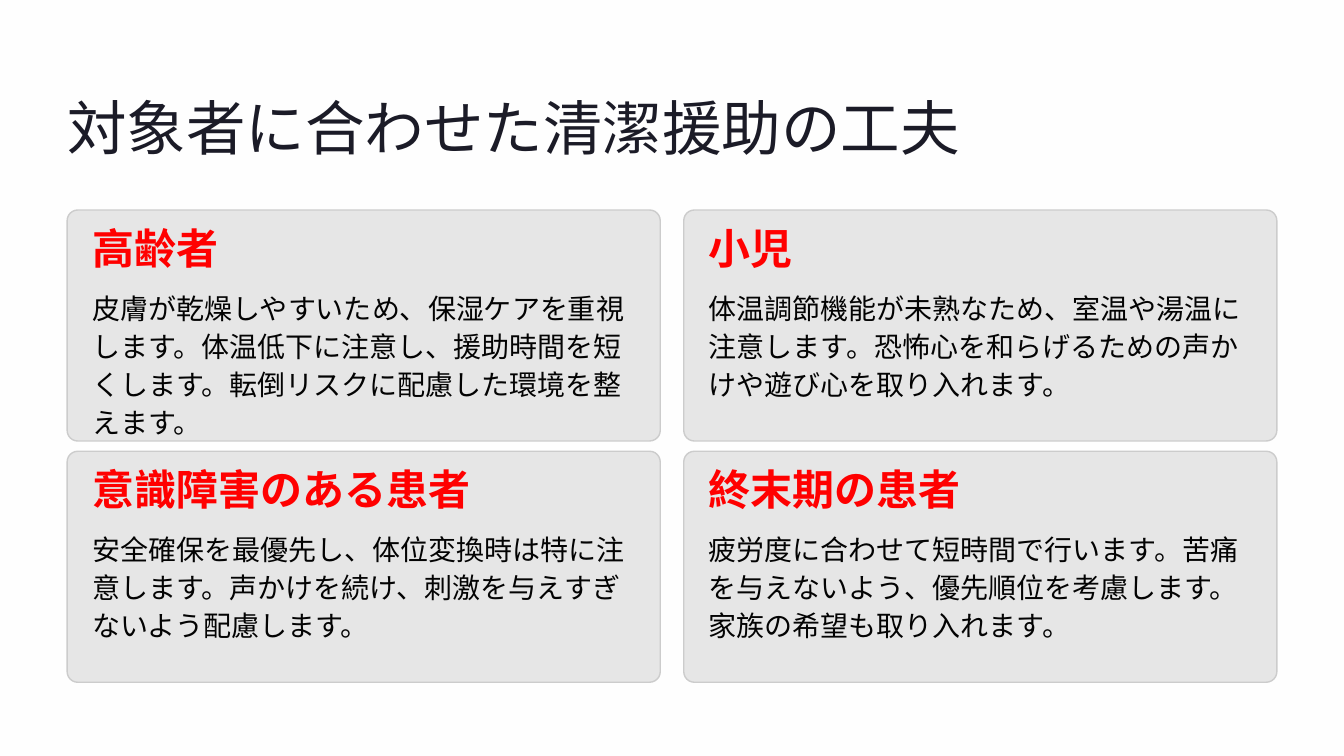
from pptx import Presentation
from pptx.dml.color import RGBColor
from pptx.enum.shapes import MSO_SHAPE
from pptx.enum.text import MSO_ANCHOR, MSO_AUTO_SIZE, PP_ALIGN
from pptx.util import Cm, Pt

CARDS = [
    ("高齢者", "皮膚が乾燥しやすいため、保湿ケアを重視します。体温低下に注意し、"
     "援助時間を短くします。転倒リスクに配慮した環境を整えます。"),
    ("小児", "体温調節機能が未熟なため、室温や湯温に注意します。"
     "恐怖心を和らげるための声かけや遊び心を取り入れます。"),
    ("意識障害のある患者", "安全確保を最優先し、体位変換時は特に注意します。"
     "声かけを続け、刺激を与えすぎないよう配慮します。"),
    ("終末期の患者", "疲労度に合わせて短時間で行います。苦痛を与えないよう、"
     "優先順位を考慮します。家族の希望も取り入れます。"),
]


def paint(color, code):
    color.rgb = RGBColor.from_string(code)


def write(shape, text, size, color, font="Inter", bold=False, lead=32, wrap=False):
    frame = shape.text_frame
    frame.margin_left = frame.margin_right = 0
    frame.margin_top = frame.margin_bottom = 0
    frame.auto_size = MSO_AUTO_SIZE.NONE
    frame.vertical_anchor = MSO_ANCHOR.TOP
    frame.word_wrap = wrap
    para = frame.paragraphs[0]
    para.alignment = PP_ALIGN.LEFT
    para.line_spacing = Pt(lead)
    run = para.add_run()
    run.text = text
    run.font.name = font
    run.font.size = Pt(size)
    run.font.bold = bold
    paint(run.font.color, color)


def add_title(slide, text, left, top, width, height):
    title = slide.shapes.title
    title.left, title.top = Cm(left), Cm(top)
    title.width, title.height = Cm(width), Cm(height)
    write(title, text, 51, "1B1B27", lead=64)


def add_card(slide, head, body, left, top, width, height, pad=0.76):
    # Panel
    panel = slide.shapes.add_shape(MSO_SHAPE.ROUNDED_RECTANGLE,
                                   Cm(left), Cm(top), Cm(width), Cm(height))
    panel.adjustments[0] = 0.046
    panel.shadow.inherit = False
    panel.fill.solid()
    paint(panel.fill.fore_color, "E6E6E6")
    paint(panel.line.color, "CCCCCC")
    panel.line.width = Pt(1.2)

    # Heading and body
    label = slide.shapes.add_textbox(Cm(left + pad), Cm(top + pad), Cm(9.04), Cm(1.14))
    write(label, head, 36, "FF0000", bold=True)
    note = slide.shapes.add_textbox(Cm(left + pad), Cm(top + 2.34),
                                    Cm(width - 2 * pad), Cm(3.48))
    write(note, body, 24, "030303", font="Cabin", lead=32.5, wrap=True)


def add_grid(slide, left, top, width, height, gap_x=0.71, gap_y=0.31):
    wide = (width - gap_x) / 2
    tall = (height - gap_y) / 2
    for i, (head, body) in enumerate(CARDS):
        row, col = divmod(i, 2)
        add_card(slide, head, body, left + col * (wide + gap_x),
                 top + row * (tall + gap_y), wide, tall)


def main():
    deck = Presentation()
    deck.slide_width, deck.slide_height = Cm(40.64), Cm(22.86)
    slide = deck.slides.add_slide(deck.slide_layouts[5])
    fill = slide.background.fill
    fill.solid()
    paint(fill.fore_color, "FEFEFE")
    add_title(slide, "対象者に合わせた清潔援助の工夫", 2.03, 2.64, 27.15, 2.26)
    add_grid(slide, 2.03, 6.35, 36.58, 14.28)
    deck.save("out.pptx")


if __name__ == "__main__":
    main()
